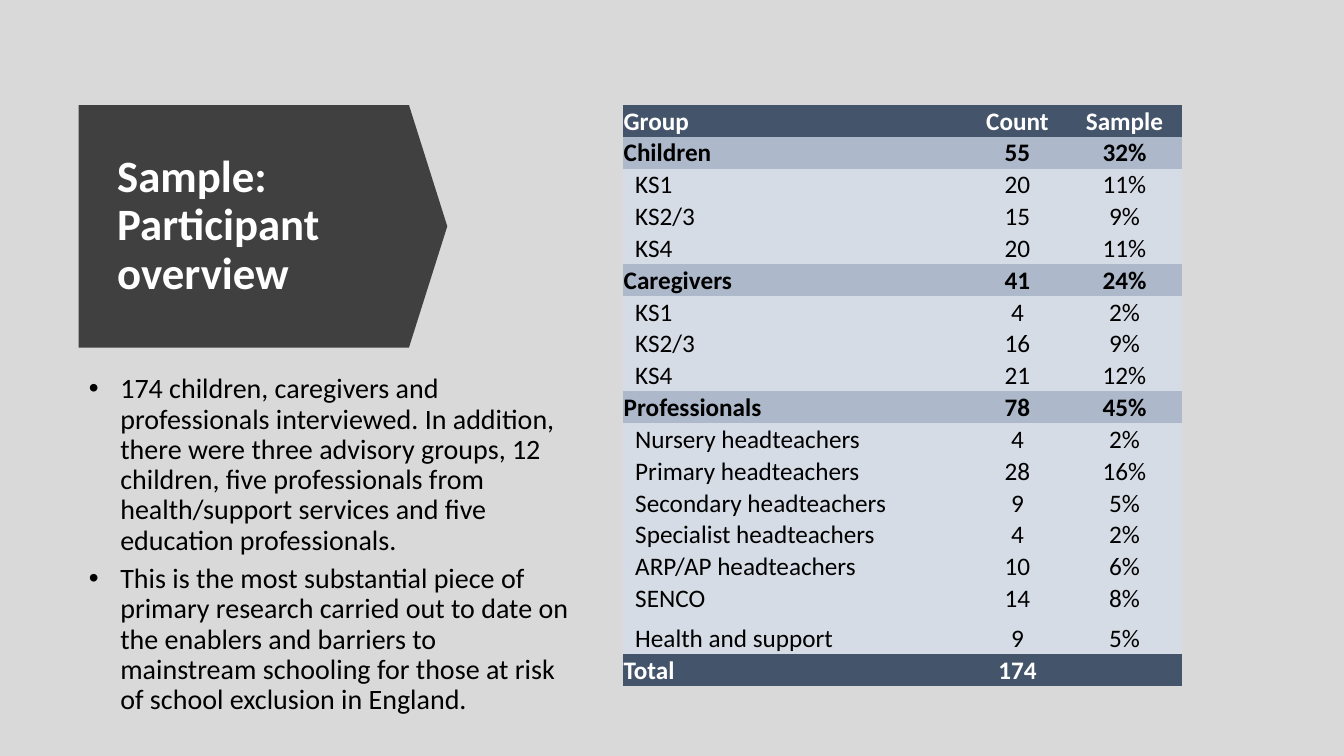
from pptx import Presentation
from pptx.dml.color import RGBColor
from pptx.enum.shapes import MSO_SHAPE
from pptx.enum.text import MSO_ANCHOR, MSO_AUTO_SIZE, PP_ALIGN
from pptx.oxml.ns import qn
from pptx.util import Pt
from lxml.etree import SubElement

PX = 9525
FONT = "Calibri"
PLAIN_TABLE = "{2D5ABB26-0587-4C30-8999-92F81FD0307C}"
GREY = RGBColor(0xD9, 0xD9, 0xD9)
CHARCOAL = RGBColor(0x40, 0x40, 0x40)
WHITE = RGBColor(0xFF, 0xFF, 0xFF)
BLACK = RGBColor(0x00, 0x00, 0x00)
NAVY = RGBColor(0x44, 0x54, 0x6A)
STEEL = RGBColor(0xAD, 0xB9, 0xCA)
PALE = RGBColor(0xD6, 0xDC, 0xE5)

TITLE = "Sample: Participant overview"
POINTS = [
    "174 children, caregivers and professionals interviewed. In addition, there were three "
    "advisory groups, 12 children, five professionals from health/support services and five "
    "education professionals.",
    "This is the most substantial piece of primary research carried out to date on the "
    "enablers and barriers to mainstream schooling for those at risk of school exclusion "
    "in England.",
]
ROWS = [
    ("total", "Group", "Count", "Sample"),
    ("group", "Children", "55", "32%"),
    ("member", "KS1", "20", "11%"),
    ("member", "KS2/3", "15", "9%"),
    ("member", "KS4", "20", "11%"),
    ("group", "Caregivers", "41", "24%"),
    ("member", "KS1", "4", "2%"),
    ("member", "KS2/3", "16", "9%"),
    ("member", "KS4", "21", "12%"),
    ("group", "Professionals", "78", "45%"),
    ("member", "Nursery headteachers", "4", "2%"),
    ("member", "Primary headteachers", "28", "16%"),
    ("member", "Secondary headteachers", "9", "5%"),
    ("member", "Specialist headteachers", "4", "2%"),
    ("member", "ARP/AP headteachers", "10", "6%"),
    ("member", "SENCO", "14", "8%"),
    ("member", "Health and support", "9", "5%"),
    ("total", "Total", "174", ""),
]
ROW_STYLES = {
    "total": (NAVY, WHITE, True, 1),
    "group": (STEEL, BLACK, True, 1),
    "member": (PALE, BLACK, False, 12),
}


class SlideBuilder:
    """Holds the text style and the current slide, and adds its elements."""

    def __init__(self, page):
        self.page = page
        page.background.fill.solid()
        page.background.fill.fore_color.rgb = GREY

    def place(self, shape, left, top, width, height):
        shape.left, shape.top = left * PX, top * PX
        shape.width, shape.height = width * PX, height * PX

    def style(self, para, size, color, bold=False, align=PP_ALIGN.LEFT):
        para.alignment = align
        para.font.name = FONT
        para.font.size = Pt(size)
        para.font.bold = bold
        para.font.color.rgb = color

    def space(self, para):
        para.line_spacing = 0.9
        para.space_before = Pt(0)
        para.space_after = Pt(6)

    def arrow(self, left, top, width, height):
        box = [length * PX for length in (left, top, width, height)]
        arrow = self.page.shapes.add_shape(MSO_SHAPE.DOWN_ARROW, *box)
        arrow.rotation = 270
        arrow.adjustments[0], arrow.adjustments[1] = 1, 0.158
        arrow.shadow.inherit = False
        arrow.fill.solid()
        arrow.fill.fore_color.rgb = CHARCOAL
        arrow.line.fill.background()
        self.page.shapes.title._element.addprevious(arrow._element)

    def title(self, text, *box):
        title = self.page.shapes.title
        self.place(title, *box)
        frame = title.text_frame
        frame.text = text
        frame.word_wrap = True
        frame.auto_size = MSO_AUTO_SIZE.NONE
        frame.vertical_anchor = MSO_ANCHOR.MIDDLE
        self.style(frame.paragraphs[0], 32, WHITE, True)
        self.space(frame.paragraphs[0])

    def bullets(self, points, *box):
        body = self.page.placeholders[1]
        self.place(body, *box)
        frame = body.text_frame
        frame.text = "\n".join(points)
        frame.word_wrap = True
        frame.auto_size = MSO_AUTO_SIZE.NONE
        frame.vertical_anchor = MSO_ANCHOR.TOP
        for para in frame.paragraphs:
            self.style(para, 20, BLACK)
            self.space(para)
            properties = para._p.get_or_add_pPr()
            properties.set("marL", str(30 * PX))
            properties.set("indent", str(-30 * PX))
            bullet = SubElement(properties, qn("a:buChar"), char="•")
            properties.find(qn("a:defRPr")).addprevious(bullet)

    def table(self, rows, left, top, widths, heights):
        frame = self.page.shapes.add_table(
            len(rows), len(widths), left * PX, top * PX, sum(widths) * PX, sum(heights) * PX)
        table = frame.table
        table.first_row = table.horz_banding = False
        table._tbl.tblPr.find(qn("a:tableStyleId")).text = PLAIN_TABLE
        for column, width in zip(table.columns, widths):
            column.width = width * PX
        for row, height, (kind, *texts) in zip(table.rows, heights, rows):
            row.height = height * PX
            for index, (cell, text) in enumerate(zip(row.cells, texts)):
                self.cell(cell, text, kind, index == 0)

    def cell(self, cell, text, kind, is_label):
        fill, color, bold, indent = ROW_STYLES[kind]
        cell.text = text
        cell.fill.solid()
        cell.fill.fore_color.rgb = fill
        cell.vertical_anchor = MSO_ANCHOR.BOTTOM
        cell.margin_left = (indent if is_label else 1) * PX
        cell.margin_top = cell.margin_right = PX
        cell.margin_bottom = 0
        align = PP_ALIGN.LEFT if is_label else PP_ALIGN.CENTER
        self.style(cell.text_frame.paragraphs[0], 18, color, bold, align)


def main():
    deck = Presentation()
    deck.slide_width, deck.slide_height = 1280 * PX, 720 * PX
    slide = SlideBuilder(deck.slides.add_slide(deck.slide_layouts[1]))
    slide.arrow(135, 40, 231, 351)
    slide.title(TITLE, 102, 100, 343, 231)
    slide.bullets(POINTS, 75, 352, 477, 345)
    heights = [38 if row[1] == "Health and support" else 28 for row in ROWS]
    slide.table(ROWS, 593, 100, [329, 94, 110], heights)
    deck.save("out.pptx")


if __name__ == "__main__":
    main()
